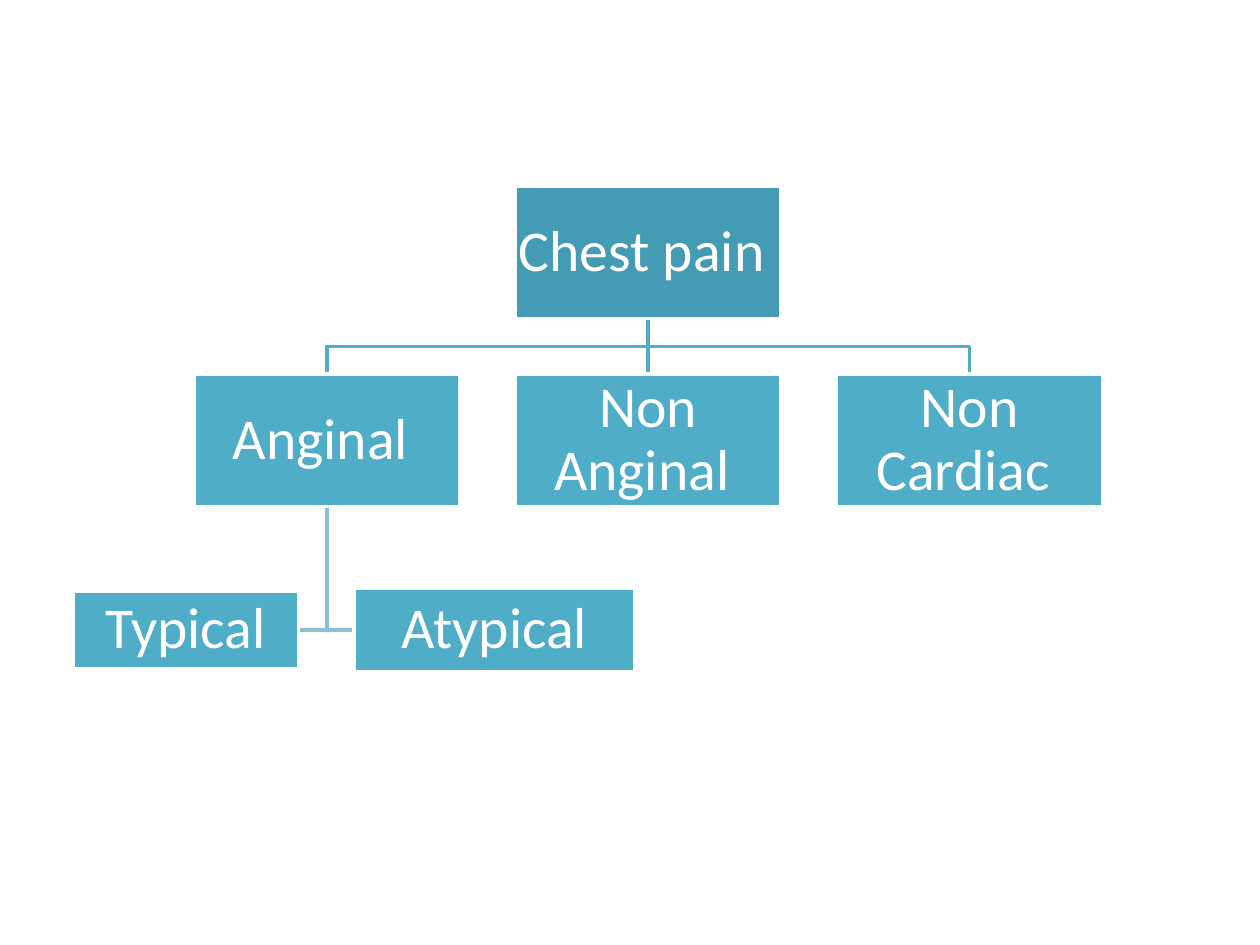
"""Build a slide with a chest pain classification chart."""
from dataclasses import dataclass

from lxml import etree
from pptx import Presentation
from pptx.dml.color import RGBColor
from pptx.enum.shapes import MSO_CONNECTOR, MSO_SHAPE
from pptx.enum.text import MSO_ANCHOR, PP_ALIGN
from pptx.oxml.ns import qn
from pptx.util import Inches, Pt

RECTANGLE = MSO_SHAPE.RECTANGLE
STRAIGHT = MSO_CONNECTOR.STRAIGHT
MIDDLE = MSO_ANCHOR.MIDDLE
CENTER = PP_ALIGN.CENTER
TOP_SIDE, BOTTOM_SIDE = 0, 2


@dataclass(frozen=True)
class Theme:
    root: RGBColor = RGBColor(0x44, 0x9C, 0xB4)
    node: RGBColor = RGBColor(0x50, 0xAD, 0xC7)
    branch: RGBColor = RGBColor(0x8B, 0xC0, 0xD3)
    white: RGBColor = RGBColor(0xFF, 0xFF, 0xFF)
    font: str = "Calibri"
    size: Pt = Pt(33)
    line: Pt = Pt(2)
    inset: Inches = Inches(0.02)


THEME = Theme()


@dataclass(frozen=True)
class Node:
    text: str
    left: float
    top: float
    width: float = 2.11
    height: float = 1.05
    fill: RGBColor = THEME.node

    @property
    def right(self) -> float:
        return self.left + self.width

    @property
    def bottom(self) -> float:
        return self.top + self.height

    @property
    def center(self) -> float:
        return self.left + self.width / 2

    @property
    def middle(self) -> float:
        return self.top + self.height / 2


COLUMNS = [1.54 + 2.55 * i for i in range(3)]
ROOT = Node("Chest pain ", COLUMNS[1], 1.48, fill=THEME.root)
ANGINAL, NON_ANGINAL, NON_CARDIAC = [
    Node(text, left, 2.97)
    for text, left in zip(("Anginal ", "Non Anginal ", "Non Cardiac "), COLUMNS)
]
TYPICAL = Node("Typical", 0.58, 4.69, 1.79, 0.62)
ATYPICAL = Node("Atypical", 2.81, 4.67, 2.23, 0.66)


def send_to_back(shape) -> None:
    """Place a shape behind all others."""
    shape.element.getparent().insert(2, shape.element)


def draw_node(s, node: Node):
    """Draw a labelled box."""
    sp = s.shapes.add_shape(RECTANGLE, Inches(node.left), Inches(node.top),
                            Inches(node.width), Inches(node.height))
    sp.shadow.inherit = False
    sp.fill.solid()
    sp.fill.fore_color.rgb = node.fill
    sp.line.color.rgb = THEME.white
    sp.line.width = THEME.line
    tf = sp.text_frame
    tf.word_wrap = True
    tf.vertical_anchor = MIDDLE
    tf.margin_left = tf.margin_right = THEME.inset
    tf.margin_top = tf.margin_bottom = THEME.inset
    p = tf.paragraphs[0]
    p.text = node.text
    p.alignment = CENTER
    p.line_spacing = 0.9
    p.font.name = THEME.font
    p.font.size = THEME.size
    p.font.color.rgb = THEME.white
    return sp


def draw_bend(s, points: list[tuple[float, float]], color: RGBColor) -> None:
    """Draw an open bent line behind the boxes."""
    start, *rest = [(Inches(x), Inches(y)) for x, y in points]
    builder = s.shapes.build_freeform(*start)
    builder.add_line_segments(rest, close=False)
    sp = builder.convert_to_shape()
    sp.shadow.inherit = False
    sp.fill.background()
    sp.line.color.rgb = color
    sp.line.width = THEME.line
    send_to_back(sp)


def draw_link(s, upper, lower) -> None:
    """Join two stacked boxes with a straight connector."""
    link = s.shapes.add_connector(STRAIGHT, 0, 0, 0, 0)
    link.begin_connect(upper, BOTTOM_SIDE)
    link.end_connect(lower, TOP_SIDE)
    link.line.color.rgb = THEME.node
    link.line.width = THEME.line
    etree.SubElement(link.element.spPr, qn("a:effectLst"))
    send_to_back(link)


def main() -> None:
    """Create and save the slide."""
    prs = Presentation()
    prs.slide_width, prs.slide_height = Inches(10), Inches(7.5)
    s = prs.slides.add_slide(prs.slide_layouts[6])

    nodes = (ROOT, ANGINAL, TYPICAL, ATYPICAL, NON_ANGINAL, NON_CARDIAC)
    boxes = {node: draw_node(s, node) for node in nodes}

    draw_link(s, boxes[ROOT], boxes[NON_ANGINAL])
    for child in (ANGINAL, NON_CARDIAC):
        rail = (ROOT.bottom + child.top) / 2
        draw_bend(s, [(ROOT.center, ROOT.bottom), (ROOT.center, rail),
                      (child.center, rail), (child.center, child.top)], THEME.node)
    for child, edge in ((TYPICAL, TYPICAL.right), (ATYPICAL, ATYPICAL.left)):
        draw_bend(s, [(ANGINAL.center, ANGINAL.bottom),
                      (ANGINAL.center, child.middle), (edge, child.middle)], THEME.branch)

    prs.save("out.pptx")


if __name__ == "__main__":
    main()
